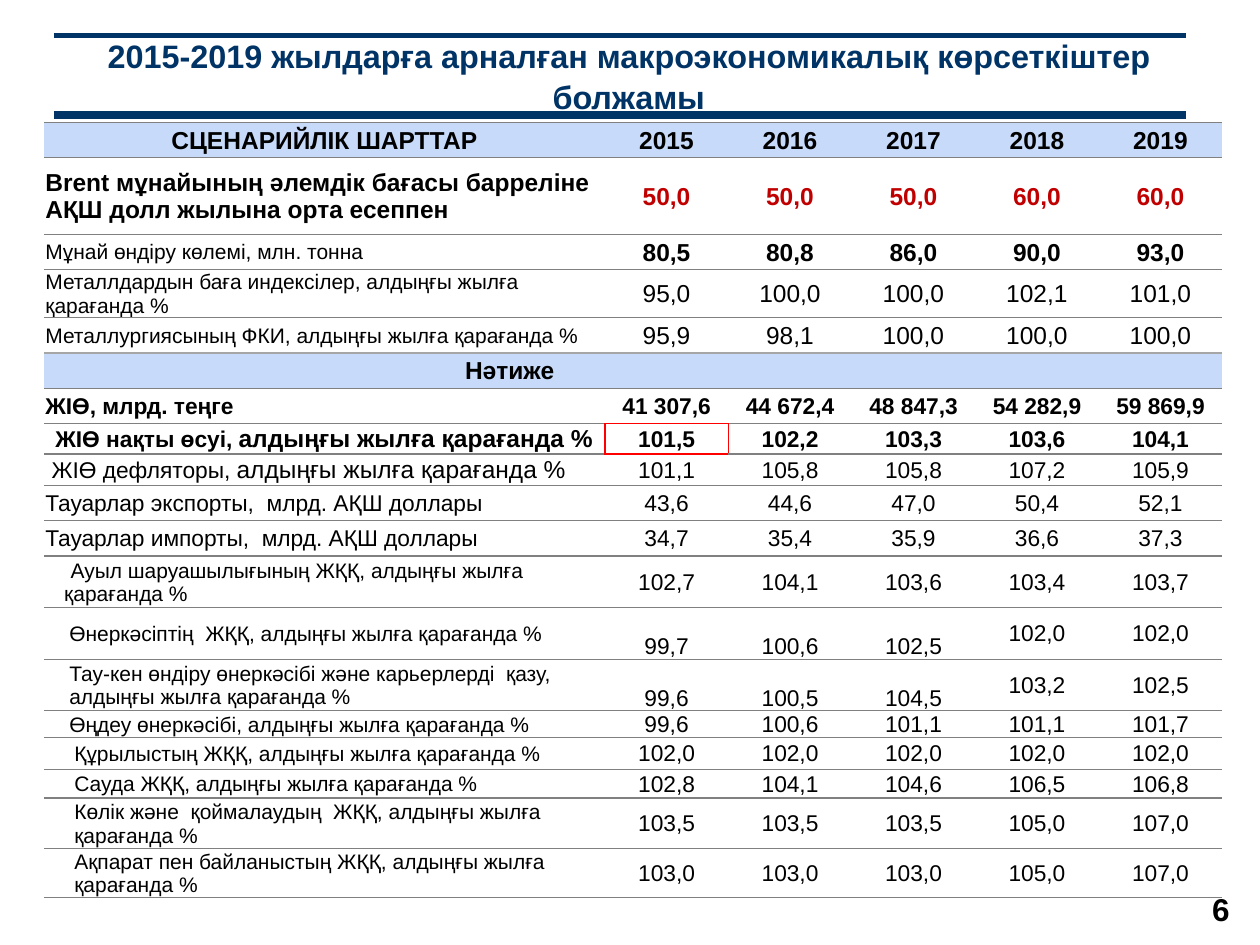
from dataclasses import dataclass

from lxml import etree
from pptx import Presentation
from pptx import util as u
from pptx.dml.color import RGBColor
from pptx.enum import shapes, text
from pptx.oxml import ns


@dataclass(frozen=True)
class Theme:
    font: str = "Arial"
    navy: str = "003366"
    black: str = "000000"
    white: str = "FFFFFF"
    band: str = "C7DAF9"
    crimson: str = "C00000"
    red: str = "FF0000"
    grey: str = "808080"
    light_grey: str = "A6A6A6"
    title: float = 18.5
    number: float = 18
    large: float = 14
    medium: float = 13
    small: float = 12


THEME = Theme()
LEFT, TOP = 0.35, 0.97
LABEL_WIDTH, YEAR_WIDTH = 4.45, 0.98
YEARS = 5
INSET = 0.01
SECTION_SPAN = 4


@dataclass(frozen=True)
class Row:
    label: str  # "|" parts the first run from a larger second one
    values: str  # figures parted by ";"
    height: float = 0.28
    label_size: float = THEME.small
    size: float = THEME.medium
    label_bold: bool = False
    bold: bool = False
    indent: float = INSET
    first_line: float = 0
    color: str = THEME.black
    fill: str = THEME.white
    centred: bool = False
    low_figures: int = 0  # leading figures that sit at the bottom


BIG, MID = THEME.large, THEME.medium
ROWS = [
    Row("СЦЕНАРИЙЛІК ШАРТТАР", "2015;2016;2017;2018;2019", label_size=BIG, size=BIG,
        label_bold=True, bold=True, fill=THEME.band, centred=True),
    Row("Brent мұнайының әлемдік бағасы барреліне\vАҚШ долл жылына орта есеппен",
        "50,0;50,0;50,0;60,0;60,0", 0.61, BIG, BIG, True, True, color=THEME.crimson),
    Row("Мұнай өндіру көлемі, млн. тонна", "80,5;80,8;86,0;90,0;93,0", size=BIG, bold=True),
    Row("Металлдардын баға индексілер, алдыңғы жылға қарағанда %",
        "95,0;100,0;100,0;102,1;101,0", 0.38, size=BIG),
    Row("Металлургиясының ФКИ, алдыңғы жылға қарағанда %",
        "95,9;98,1;100,0;100,0;100,0", size=BIG),
    Row("Нәтиже", ";;;;", label_size=BIG, label_bold=True, fill=THEME.band, centred=True),
    Row("ЖІӨ, млрд. теңге", "41 307,6;44 672,4;48 847,3;54 282,9;59 869,9",
        label_size=MID, label_bold=True, bold=True),
    Row("ЖІӨ нақты өсуі, |алдыңғы жылға қарағанда %", "101,5;102,2;103,3;103,6;104,1",
        0.24, MID, label_bold=True, bold=True, indent=0.09),
    Row("ЖІӨ дефляторы, |алдыңғы жылға қарағанда %", "101,1;105,8;105,8;107,2;105,9",
        0.25, MID, indent=0.06),
    Row("Тауарлар экспорты,  млрд. АҚШ доллары", "43,6;44,6;47,0;50,4;52,1", label_size=MID),
    Row("Тауарлар импорты,  млрд. АҚШ доллары", "34,7;35,4;35,9;36,6;37,3", label_size=MID),
    Row("Ауыл шаруашылығының ЖҚҚ, алдыңғы жылға қарағанда %",
        "102,7;104,1;103,6;103,4;103,7", 0.41, indent=0.16, first_line=0.05),
    Row("Өнеркәсіптің  ЖҚҚ, алдыңғы жылға қарағанда %",
        "99,7;100,6;102,5;102,0;102,0", 0.41, indent=0.2, low_figures=3),
    Row("Тау-кен өндіру өнеркәсібі және карьерлерді  қазу,\nалдыңғы жылға қарағанда %",
        "99,6;100,5;104,5;103,2;102,5", 0.41, indent=0.2, low_figures=3),
    Row("Өңдеу өнеркәсібі, алдыңғы жылға қарағанда %",
        "99,6;100,6;101,1;101,1;101,7", 0.21, indent=0.2),
    Row("Құрылыстың ЖҚҚ, алдыңғы жылға қарағанда %",
        "102,0;102,0;102,0;102,0;102,0", 0.25, indent=0.24),
    Row("Сауда ЖҚҚ, алдыңғы жылға қарағанда %",
        "102,8;104,1;104,6;106,5;106,8", 0.23, indent=0.24),
    Row("Көлік және  қоймалаудың  ЖҚҚ, алдыңғы жылға\nқарағанда %",
        "103,5;103,5;103,5;105,0;107,0", 0.4, indent=0.24),
    Row("Ақпарат пен байланыстың ЖҚҚ, алдыңғы жылға\nқарағанда %",
        "103,0;103,0;103,0;105,0;107,0", 0.39, indent=0.24),
]
SECTION_ROW, GROWTH_ROW = 5, 7


def style(span, size: float, color: str, bold: bool) -> None:
    span.font.name = THEME.font
    span.font.size = u.Pt(size)
    span.font.bold = bold
    span.font.color.rgb = RGBColor.from_string(color)


def add_rule(page, y: float, weight: float) -> None:
    line = page.shapes.add_connector(shapes.MSO_CONNECTOR.STRAIGHT,
                                     u.Inches(9.41), u.Inches(y), u.Inches(0.43), u.Inches(y))
    line.line.color.rgb = RGBColor.from_string(THEME.navy)
    line.line.width = u.Pt(weight)
    etree.SubElement(line._element.spPr, ns.qn("a:effectLst"))


def set_borders(cell, row: int, column: int) -> None:
    """Grey rules between rows, and a red frame round this year's growth."""
    def horizontal(edge: int) -> tuple:
        if column == 1 and edge in (GROWTH_ROW, GROWTH_ROW + 1):
            return THEME.red, 1
        return (THEME.light_grey, 1) if edge == SECTION_ROW else (THEME.grey, 0.75)

    def vertical(edge: int) -> tuple | None:
        return (THEME.red, 1) if row == GROWTH_ROW and edge in (1, 2) else None

    sides = {"L": vertical(column), "R": vertical(column + 1),
             "T": horizontal(row), "B": horizontal(row + 1)}
    properties = cell._tc.get_or_add_tcPr()
    for side, pen in sides.items():
        line = etree.SubElement(properties, ns.qn(f"a:ln{side}"))
        if pen is None:
            etree.SubElement(line, ns.qn("a:noFill"))
            continue
        color, weight = pen
        line.set("w", str(u.Pt(weight)))
        solid = etree.SubElement(line, ns.qn("a:solidFill"))
        etree.SubElement(solid, ns.qn("a:srgbClr")).set("val", color)


def fill_cell(cell, content: str, row: Row, is_label: bool) -> None:
    cell.fill.solid()
    cell.fill.fore_color.rgb = RGBColor.from_string(row.fill)
    cell.margin_left = u.Inches(row.indent if is_label else INSET)
    cell.margin_right = cell.margin_top = u.Inches(INSET)
    cell.margin_bottom = 0
    cell.vertical_anchor = text.MSO_ANCHOR.MIDDLE
    first, _, larger = content.partition("|")
    cell.text_frame.text = first
    if larger:
        cell.text_frame.paragraphs[0].add_run().text = larger
    size = row.label_size if is_label else row.size
    for para in cell.text_frame.paragraphs:
        centred = row.centred or not is_label
        para.alignment = text.PP_ALIGN.CENTER if centred else text.PP_ALIGN.LEFT
        if is_label and row.first_line:
            para._p.get_or_add_pPr().set("indent", str(u.Inches(row.first_line)))
        for index, span in enumerate(para.runs):
            run_size = THEME.large if larger and index else size
            if is_label:
                style(span, run_size, THEME.black, row.label_bold)
            else:
                style(span, size, row.color, row.bold)
        if not para.runs:  # keeps empty cells from stretching the row
            etree.SubElement(para._p, ns.qn("a:endParaRPr")).set("sz", str(int(size * 100)))


def add_forecast(page) -> None:
    frame = page.shapes.add_table(len(ROWS), YEARS + 1, u.Inches(LEFT), u.Inches(TOP),
                                  u.Inches(LABEL_WIDTH + YEARS * YEAR_WIDTH),
                                  u.Inches(sum(row.height for row in ROWS)))
    table = frame.table
    table.first_row = table.horz_banding = False
    for column in range(YEARS + 1):
        table.columns[column].width = u.Inches(YEAR_WIDTH if column else LABEL_WIDTH)
    for index, row in enumerate(ROWS):
        table.rows[index].height = u.Inches(row.height)
        for column, content in enumerate([row.label, *row.values.split(";")]):
            cell = table.cell(index, column)
            set_borders(cell, index, column)
            fill_cell(cell, content, row, is_label=column == 0)
            if 0 < column <= row.low_figures:
                cell.vertical_anchor = text.MSO_ANCHOR.BOTTOM
    table.cell(SECTION_ROW, 0).merge(table.cell(SECTION_ROW, SECTION_SPAN - 1))


def place_text(box, content: str, size: float, color: str) -> None:
    frame = box.text_frame
    frame.text = content
    frame.word_wrap = True
    frame.auto_size = text.MSO_AUTO_SIZE.NONE
    frame.vertical_anchor = text.MSO_ANCHOR.MIDDLE
    frame.margin_top = frame.margin_bottom = 0
    frame.paragraphs[0].alignment = text.PP_ALIGN.CENTER
    style(frame.paragraphs[0].runs[0], size, color, True)


def main() -> None:
    deck = Presentation()
    deck.slide_width, deck.slide_height = u.Inches(10), u.Inches(7.5)
    page = deck.slides.add_slide(deck.slide_layouts[5])
    # Title between two rules
    add_rule(page, 0.91, 4.5)
    add_rule(page, 0.28, 3)
    title = page.shapes.title
    title.left, title.top, title.width, title.height = map(u.Inches, (0.43, 0.31, 9.02, 0.57))
    place_text(title, "2015-2019 жылдарға арналған макроэкономикалық көрсеткіштер болжамы",
               THEME.title, THEME.navy)
    title.text_frame.paragraphs[0].line_spacing = 1.05
    title.text_frame.margin_left = u.Inches(0.2)
    # Page number
    number = page.shapes.add_shape(shapes.MSO_SHAPE.RECTANGLE,
                                   *map(u.Inches, (9.39, 6.94, 0.6, 0.55)))
    number.shadow.inherit = False
    number.fill.solid()
    number.fill.fore_color.rgb = RGBColor.from_string(THEME.white)
    number.line.fill.background()
    place_text(number, "6", THEME.number, THEME.black)
    # Forecast table
    add_forecast(page)
    deck.save("out.pptx")


if __name__ == "__main__":
    main()
